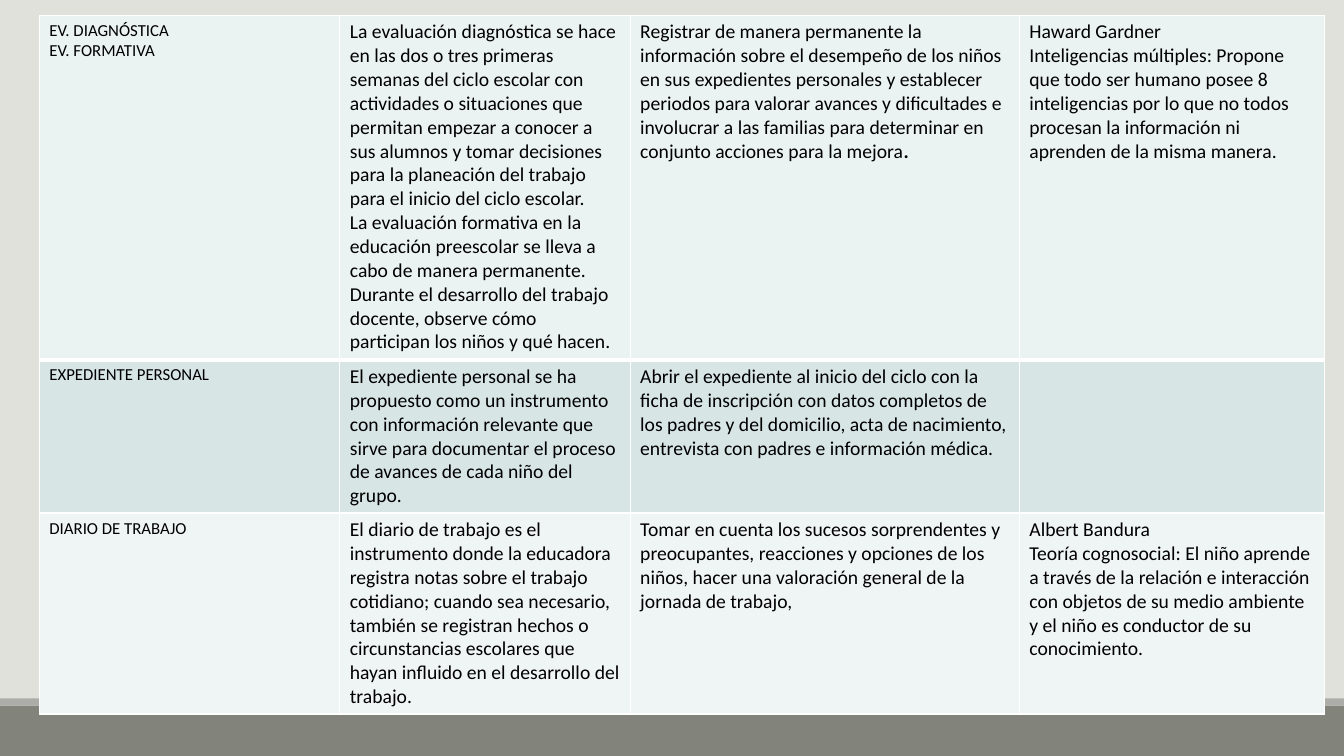
"""Build the slide comparing preschool evaluation instruments in a table."""
from dataclasses import dataclass

from lxml import etree
from pptx import Presentation
from pptx.dml.color import RGBColor
from pptx.enum import shapes
from pptx.oxml import ns
from pptx.slide import Slide
from pptx.table import _Cell
from pptx.util import Inches, Pt


@dataclass(frozen=True)
class Theme:
    font: str = "Calibri"
    ink: str = "000000"
    background: str = "E1E1DB"
    floor: str = "82847C"
    floor_edge: str = "ACADA8"
    border: str = "FFFFFF"
    label_size: int = 12
    body_size: int = 14
    thin: int = 1
    thick: int = 3


@dataclass(frozen=True)
class Band:
    top: float
    height: float
    color: str


@dataclass(frozen=True)
class Instrument:
    height: float
    fill: str
    name: list[str]
    description: list[str]
    actions: list[str]
    theory: list[str]
    bold_end: str = ""


THEME = Theme()
WIDTH, HEIGHT = 13.33, 7.5
TABLE_LEFT, TABLE_TOP = 0.39, 0.15
COLUMN_WIDTHS = [2.98, 2.88, 3.86, 3.03]
BANDS = [Band(7, 0.5, THEME.floor), Band(6.93, 0.07, THEME.floor_edge)]
INSTRUMENTS = [
    Instrument(
        3.42, "EBF2F2",
        ["EV. DIAGNÓSTICA", "EV. FORMATIVA"],
        ["La evaluación diagnóstica se hace en las dos o tres primeras semanas del ciclo "
         "escolar con actividades o situaciones que permitan empezar a conocer a sus alumnos "
         "y tomar decisiones para la planeación del trabajo para el inicio del ciclo escolar.",
         "La evaluación formativa en la educación preescolar se lleva a cabo de manera "
         "permanente. Durante el desarrollo del trabajo docente, observe cómo participan los "
         "niños y qué hacen."],
        ["Registrar de manera permanente la información sobre el desempeño de los niños en sus "
         "expedientes personales y establecer periodos para valorar avances y dificultades e "
         "involucrar a las familias para determinar en conjunto acciones para la mejora"],
        ["Haward Gardner",
         "Inteligencias múltiples: Propone que todo ser humano posee 8 inteligencias por lo "
         "que no todos procesan la información ni aprenden de la misma manera."],
        bold_end="."),
    Instrument(
        1.52, "D8E5E5",
        ["EXPEDIENTE PERSONAL"],
        ["El expediente personal se ha propuesto como un instrumento con información relevante "
         "que sirve para documentar el proceso de avances de cada niño del grupo."],
        ["Abrir el expediente al inicio del ciclo con la ficha de inscripción con datos "
         "completos de los padres y del domicilio, acta de nacimiento, entrevista con padres e "
         "información médica."],
        []),
    Instrument(
        1.99, "EFF4F4",
        ["DIARIO DE TRABAJO"],
        ["El diario de trabajo es el instrumento donde la educadora registra notas sobre el "
         "trabajo cotidiano; cuando sea necesario, también se registran hechos o circunstancias "
         "escolares que hayan influido en el desarrollo del trabajo."],
        ["Tomar en cuenta los sucesos sorprendentes y preocupantes, reacciones y opciones de "
         "los niños, hacer una valoración general de la jornada de trabajo,"],
        ["Albert Bandura",
         "Teoría cognosocial: El niño aprende a través de la relación e interacción con objetos "
         "de su medio ambiente y el niño es conductor de su conocimiento."]),
]


def draw_band(slide: Slide, band: Band) -> None:
    strip = slide.shapes.add_shape(
        shapes.MSO_SHAPE.RECTANGLE, 0, Inches(band.top), Inches(WIDTH), Inches(band.height))
    strip.shadow.inherit = False
    strip.fill.solid()
    strip.fill.fore_color.rgb = RGBColor.from_string(band.color)
    strip.line.fill.background()


def set_borders(cell: _Cell, top: int, bottom: int) -> None:
    properties = cell._tc.get_or_add_tcPr()
    widths = {"a:lnL": THEME.thin, "a:lnR": THEME.thin, "a:lnT": top, "a:lnB": bottom}
    for side, width in widths.items():
        line = etree.SubElement(properties, ns.qn(side), w=str(Pt(width)))
        fill = etree.SubElement(line, ns.qn("a:solidFill"))
        etree.SubElement(fill, ns.qn("a:srgbClr"), val=THEME.border)


def write_cell(cell: _Cell, lines: list[str], size: int) -> None:
    frame = cell.text_frame
    frame.text = "\n".join(lines)
    for paragraph in frame.paragraphs:
        paragraph.font.name = THEME.font
        paragraph.font.size = Pt(size)
        paragraph.font.bold = False
        paragraph.font.color.rgb = RGBColor.from_string(THEME.ink)


def draw_instruments(slide: Slide) -> None:
    table = slide.shapes.add_table(
        len(INSTRUMENTS), len(COLUMN_WIDTHS), Inches(TABLE_LEFT), Inches(TABLE_TOP),
        Inches(sum(COLUMN_WIDTHS)), Inches(sum(item.height for item in INSTRUMENTS))).table
    table.first_row = table.horz_banding = False
    for column, width in zip(table.columns, COLUMN_WIDTHS):
        column.width = Inches(width)
    for index, (row, item) in enumerate(zip(table.rows, INSTRUMENTS)):
        row.height = Inches(item.height)
        top = THEME.thick if index == 1 else THEME.thin
        bottom = THEME.thick if index == 0 else THEME.thin
        contents = [item.name, item.description, item.actions, item.theory]
        for position, (cell, lines) in enumerate(zip(row.cells, contents)):
            set_borders(cell, top, bottom)
            cell.fill.solid()
            cell.fill.fore_color.rgb = RGBColor.from_string(item.fill)
            write_cell(cell, lines, THEME.body_size if position else THEME.label_size)
        if item.bold_end:
            ending = row.cells[2].text_frame.paragraphs[-1].add_run()
            ending.text = item.bold_end
            ending.font.bold = True


def main() -> None:
    deck = Presentation()
    deck.slide_width, deck.slide_height = Inches(WIDTH), Inches(HEIGHT)
    slide = deck.slides.add_slide(deck.slide_layouts.get_by_name("Blank"))
    slide.background.fill.solid()
    slide.background.fill.fore_color.rgb = RGBColor.from_string(THEME.background)
    for band in BANDS:
        draw_band(slide, band)
    draw_instruments(slide)
    deck.save("out.pptx")


if __name__ == "__main__":
    main()
